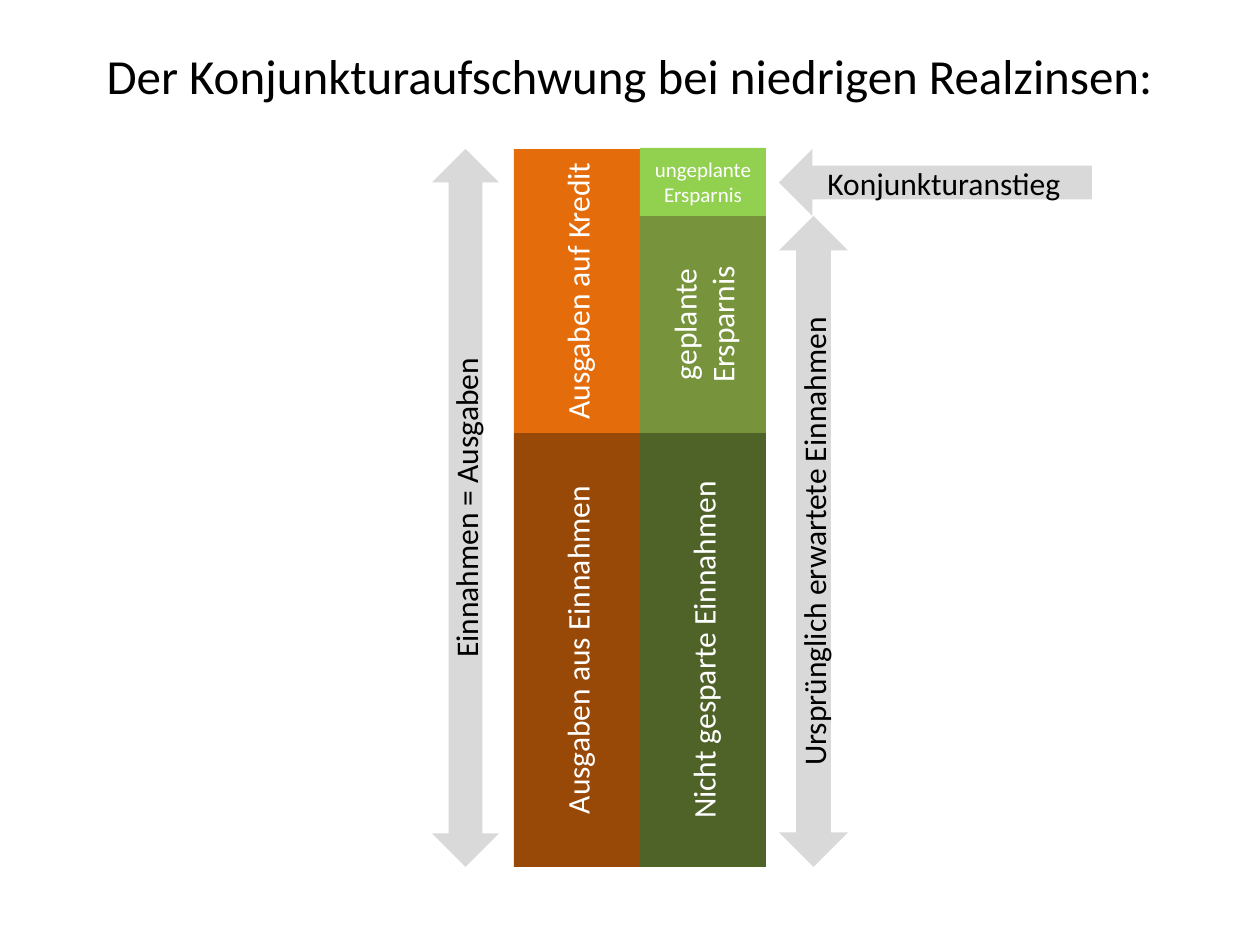
from pptx import Presentation
from pptx.dml.color import RGBColor
from pptx.enum.shapes import MSO_SHAPE
from pptx.enum.text import MSO_ANCHOR, PP_ALIGN
from pptx.util import Pt

EMU_PER_PX = 914400 / 126
BLANK_LAYOUT = 6
RECTANGLE = MSO_SHAPE.RECTANGLE
UP_DOWN_ARROW = MSO_SHAPE.UP_DOWN_ARROW
LEFT_ARROW = MSO_SHAPE.LEFT_ARROW
MIDDLE = MSO_ANCHOR.MIDDLE
CENTER = PP_ALIGN.CENTER

COLORS = {
    "black": "000000",
    "white": "FFFFFF",
    "arrow": "D9D9D9",
    "credit": "E46C0A",
    "spending": "984807",
    "unplanned": "92D050",
    "planned": "77933C",
    "unsaved": "4F6228",
}


def px(value):
    return round(value * EMU_PER_PX)


def color(name):
    return RGBColor.from_string(COLORS[name])


def write(text_frame, text, size=18, text_color="black", vertical=False):
    text_frame.word_wrap = True
    text_frame.vertical_anchor = MIDDLE
    if vertical:
        text_frame._txBody.bodyPr.set("vert", "vert270")
    paragraph = text_frame.paragraphs[0]
    paragraph.alignment = CENTER
    run = paragraph.add_run()
    run.text = text
    run.font.name = "Calibri"
    run.font.size = Pt(size)
    run.font.color.rgb = color(text_color)


class SlideBuilder:
    def __init__(self, slide):
        self.slide = slide

    def title(self, text, left, top, width, height):
        box = self.slide.shapes.add_textbox(px(left), px(top), px(width), px(height))
        write(box.text_frame, text, size=28)

    def shape(self, kind, fill, text, left, top, width, height, **text_format):
        shape = self.slide.shapes.add_shape(
            kind, px(left), px(top), px(width), px(height))
        shape.shadow.inherit = False
        shape.fill.solid()
        shape.fill.fore_color.rgb = color(fill)
        shape.line.fill.background()
        write(shape.text_frame, text, **text_format)

    def block(self, text, fill, left, top, bottom, size=18, vertical=True):
        self.shape(RECTANGLE, fill, text, left, top, COLUMN_WIDTH, bottom - top,
                   size=size, text_color="white", vertical=vertical)

    def span_arrow(self, text, left, top, width):
        """Vertical double arrow reaching down to the foot of the columns."""
        self.shape(UP_DOWN_ARROW, "arrow", text, left, top, width, BOTTOM - top,
                   vertical=True)


COLUMN_WIDTH = 126
SPENDING_LEFT = 514
INCOME_LEFT = SPENDING_LEFT + COLUMN_WIDTH
RIGHT_ARROWS_LEFT = 779
TOP, EXPECTED_TOP, SPLIT, BOTTOM = 149, 216, 433, 867


def main():
    presentation = Presentation()
    presentation.slide_width = px(1260)
    presentation.slide_height = px(945)
    layout = presentation.slide_layouts[BLANK_LAYOUT]
    builder = SlideBuilder(presentation.slides.add_slide(layout))

    builder.title("Der Konjunkturaufschwung bei niedrigen Realzinsen:",
                  74, 16, 1111, 118)

    builder.block("Nicht gesparte Einnahmen", "unsaved", INCOME_LEFT, SPLIT, BOTTOM)
    builder.block("Ausgaben aus Einnahmen", "spending", SPENDING_LEFT, SPLIT, BOTTOM)
    builder.block("geplante Ersparnis", "planned", INCOME_LEFT, EXPECTED_TOP, SPLIT)
    builder.block("Ausgaben auf Kredit", "credit", SPENDING_LEFT, TOP, SPLIT)
    builder.block("ungeplante Ersparnis", "unplanned", INCOME_LEFT, TOP - 1,
                  EXPECTED_TOP, size=12, vertical=False)

    builder.span_arrow("Ursprünglich erwartete Einnahmen",
                       RIGHT_ARROWS_LEFT, EXPECTED_TOP, 69)
    builder.span_arrow("Einnahmen = Ausgaben", 432, TOP, 67)
    builder.shape(LEFT_ARROW, "arrow", "Konjunkturanstieg",
                  RIGHT_ARROWS_LEFT, TOP, 313, EXPECTED_TOP - TOP)

    presentation.save("out.pptx")


if __name__ == "__main__":
    main()
